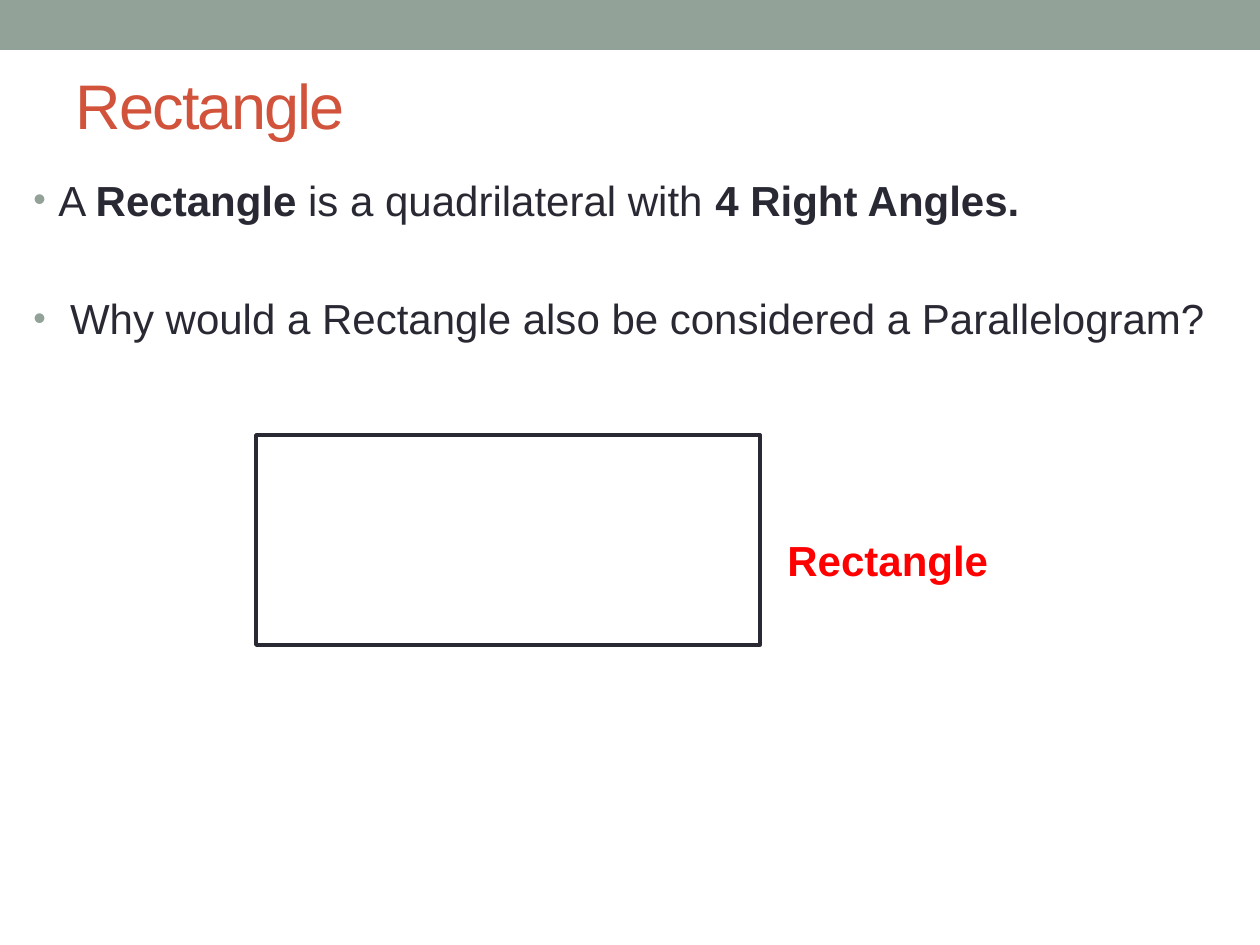
from pptx import Presentation
from pptx import util as u
from pptx.dml.color import RGBColor
from pptx.enum import shapes, text
from pptx.oxml.ns import qn

PX = 914400 // 126
SAGE, RUST, INK, RED, WHITE = "93A299", "D2533C", "292934", "FF0000", "FFFFFF"


def px(n):
    return u.Emu(n * PX)


def rgb(code):
    return RGBColor.from_string(code)


def write(par, words, size=24, color=INK, bold=False, track=None):
    run = par.add_run()
    run.text = words
    font = run.font
    font.name, font.size, font.bold = "Arial", u.Pt(size), bold
    font.color.rgb = rgb(color)
    if track is not None:
        run._r.get_or_add_rPr().set("spc", str(track * 100))


def bullet(par, color, indent):
    props = par._p.get_or_add_pPr()
    props.set("marL", str(px(indent)))
    props.set("indent", str(-px(indent)))
    tint = props.makeelement(qn("a:buClr"), {})
    tint.append(tint.makeelement(qn("a:srgbClr"), {"val": color}))
    props.append(tint)
    for tag, attrs in (("a:buSzPct", {"val": "85000"}),
                       ("a:buFont", {"typeface": "Arial"}),
                       ("a:buChar", {"char": "•"})):
        props.append(props.makeelement(qn(tag), attrs))


class Deck:
    def __init__(self, width, height):
        self.prs = Presentation()
        self.prs.slide_width, self.prs.slide_height = px(width), px(height)
        self.slide = self.prs.slides.add_slide(self.prs.slide_layouts[6])

    def rect(self, box, fill, line=None, weight=1, home=None):
        home = home or self.slide.shapes
        shape = home.add_shape(shapes.MSO_SHAPE.RECTANGLE, *map(px, box))
        shape.shadow.inherit = False
        shape.fill.solid()
        shape.fill.fore_color.rgb = rgb(fill)
        if line:
            shape.line.color.rgb = rgb(line)
            shape.line.width = u.Pt(weight)
        else:
            shape.line.fill.background()

    def line(self, start, end, color, home):
        link = home.add_connector(shapes.MSO_CONNECTOR.STRAIGHT,
                                  *map(px, start + end))
        link.line.color.rgb = rgb(color)
        link.line.width = u.Pt(0.75)
        props = link._element.spPr
        props.append(props.makeelement(qn("a:effectLst"), {}))

    def frame(self, box, anchor=text.MSO_ANCHOR.TOP):
        frame = self.slide.shapes.add_textbox(*map(px, box)).text_frame
        frame.word_wrap = True
        frame.vertical_anchor = anchor
        return frame

    def label(self, box, words, anchor=text.MSO_ANCHOR.TOP, **style):
        write(self.frame(box, anchor).paragraphs[0], words, **style)

    def points(self, box, items, gap):
        frame = self.frame(box)
        for i, runs in enumerate(items):
            par = frame.add_paragraph() if i else frame.paragraphs[0]
            par.space_before = u.Pt(gap if i else 0)
            bullet(par, SAGE, 25)
            for words, bold in runs:
                write(par, words, bold=bold)

    def figure(self, box, mark):
        """Draw a rectangle with a right-angle mark in each corner."""
        home = self.slide.shapes.add_group_shape().shapes
        self.rect(box, WHITE, INK, 2.08, home)
        left, top, width, height = box
        for x, dx in ((left, mark), (left + width, -mark)):
            for y, dy in ((top, mark), (top + height, -mark)):
                inner = (x + dx, y + dy)
                self.line((x, y + dy), inner, RED, home)
                self.line(inner, (x + dx, y), RED, home)


def main():
    deck = Deck(1260, 945)
    deck.rect((0, 0, 1260, 50), SAGE)
    deck.label((63, 73, 1134, 63), "Rectangle", text.MSO_ANCHOR.MIDDLE,
               size=36, color=RUST, track=-1)
    deck.points((21, 168, 1207, 756), [
        [("A ", False), ("Rectangle ", True),
         ("is a quadrilateral with", False)],
        [(" ", True),
         ("Why would a Rectangle also be considered a Parallelogram?", False)],
    ], gap=39)
    deck.label((703, 168, 357, 63), "4 Right Angles.", bold=True)
    deck.figure((256, 435, 504, 210), 32)
    deck.label((775, 528, 231, 63), "Rectangle", color=RED, bold=True)
    deck.prs.save("out.pptx")


if __name__ == "__main__":
    main()
